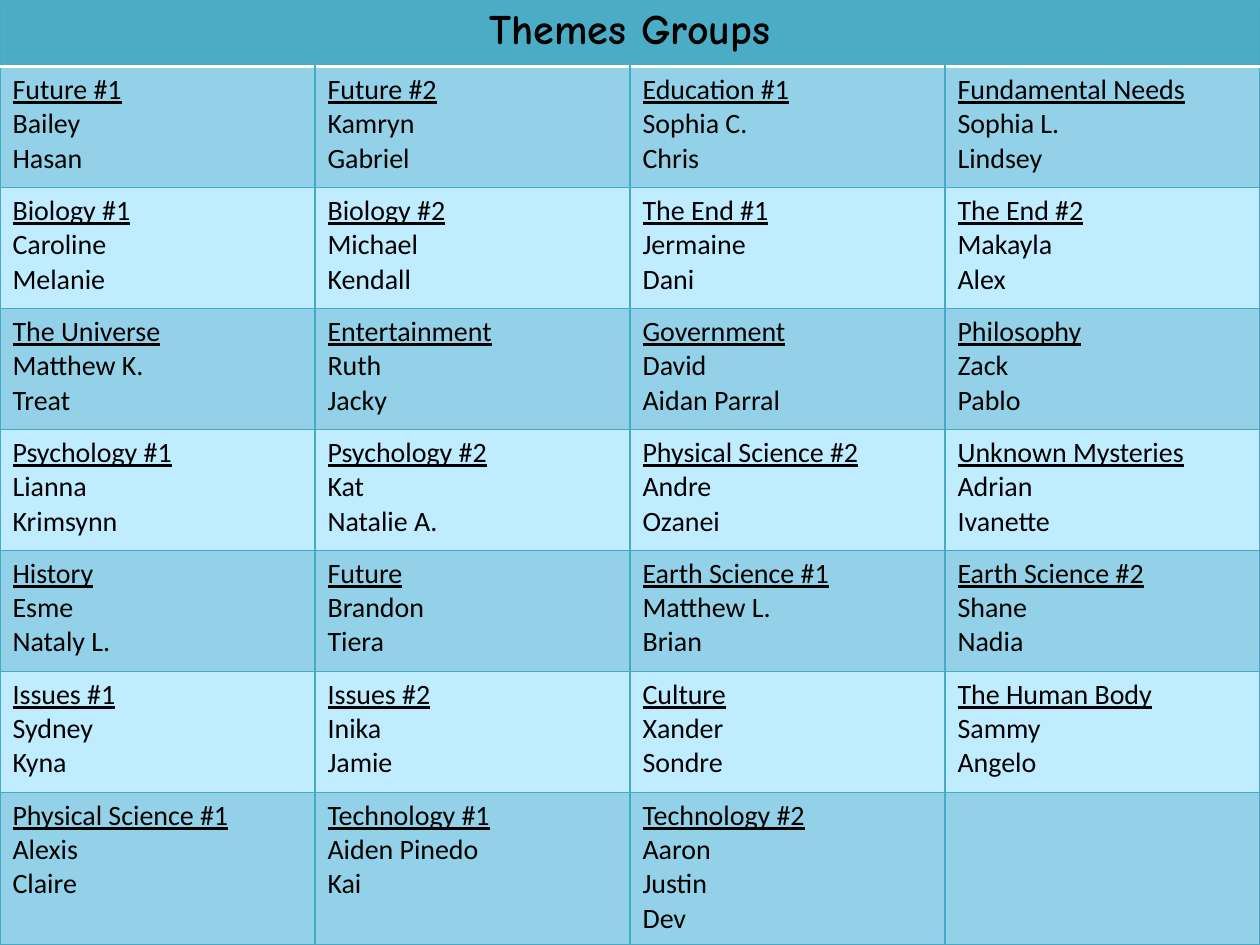
from dataclasses import dataclass

from lxml import etree
from pptx import Presentation
from pptx.dml.color import RGBColor
from pptx.enum.text import PP_ALIGN
from pptx.oxml.ns import qn
from pptx.table import _Cell
from pptx.util import Inches, Pt

CENTER, LEFT = PP_ALIGN.CENTER, PP_ALIGN.LEFT
BLANK_LAYOUT = 6
WIDTH, HEIGHT = 10, 7.5
COLUMNS = 4
HEADER_HEIGHT, ROW_HEIGHT = 0.53, 0.96
HEADER_FILL = "4BACC6"
BAND_FILLS = ("92D1E7", "C0ECFF")


@dataclass(frozen=True)
class Border:
    color: str
    points: float


@dataclass(frozen=True)
class Group:
    theme: str
    members: tuple[str, ...]


GRID = Border("46AAC5", 0.75)
HEADER_RULE = Border("FFFFFF", 2)

GROUPS = [
    Group("Future #1", ("Bailey", "Hasan")),
    Group("Future #2", ("Kamryn", "Gabriel")),
    Group("Education #1", ("Sophia C.", "Chris")),
    Group("Fundamental Needs", ("Sophia L.", "Lindsey")),
    Group("Biology #1", ("Caroline", "Melanie")),
    Group("Biology #2", ("Michael", "Kendall")),
    Group("The End #1", ("Jermaine", "Dani")),
    Group("The End #2", ("Makayla", "Alex")),
    Group("The Universe", ("Matthew K.", "Treat")),
    Group("Entertainment", ("Ruth", "Jacky")),
    Group("Government", ("David", "Aidan Parral")),
    Group("Philosophy", ("Zack", "Pablo")),
    Group("Psychology #1", ("Lianna", "Krimsynn")),
    Group("Psychology #2", ("Kat", "Natalie A.")),
    Group("Physical Science #2", ("Andre", "Ozanei")),
    Group("Unknown Mysteries", ("Adrian", "Ivanette")),
    Group("History", ("Esme", "Nataly L.")),
    Group("Future", ("Brandon", "Tiera")),
    Group("Earth Science #1", ("Matthew L.", "Brian")),
    Group("Earth Science #2", ("Shane", "Nadia")),
    Group("Issues #1", ("Sydney", "Kyna")),
    Group("Issues #2", ("Inika", "Jamie")),
    Group("Culture", ("Xander", "Sondre")),
    Group("The Human Body", ("Sammy", "Angelo")),
    Group("Physical Science #1", ("Alexis", "Claire")),
    Group("Technology #1", ("Aiden Pinedo", "Kai")),
    Group("Technology #2", ("Aaron", "Justin", "Dev")),
]


def rgb(color: str) -> RGBColor:
    return RGBColor.from_string(color)


def style_cell(cell: _Cell, fill: str, top: Border, bottom: Border) -> None:
    properties = cell._tc.get_or_add_tcPr()
    sides = {"a:lnL": GRID, "a:lnR": GRID, "a:lnT": top, "a:lnB": bottom}
    for tag, border in sides.items():
        line = etree.SubElement(properties, qn(tag), w=str(Pt(border.points)))
        paint = etree.SubElement(line, qn("a:solidFill"))
        etree.SubElement(paint, qn("a:srgbClr"), val=border.color)
    cell.fill.solid()
    cell.fill.fore_color.rgb = rgb(fill)


def write_lines(cell: _Cell, lines: tuple[str, ...], face: str, size: int,
                bold: bool = False, underline_first: bool = False,
                align: PP_ALIGN = LEFT) -> None:
    cell.text = "\n".join(lines)
    for index, para in enumerate(cell.text_frame.paragraphs):
        para.alignment = align
        font = para.font
        font.name, font.size, font.bold = face, Pt(size), bold
        font.underline = underline_first and index == 0
        font.color.rgb = rgb("000000")


def main() -> None:
    deck = Presentation()
    deck.slide_width, deck.slide_height = Inches(WIDTH), Inches(HEIGHT)
    page = deck.slides.add_slide(deck.slide_layouts[BLANK_LAYOUT])

    group_rows = -(-len(GROUPS) // COLUMNS)
    table = page.shapes.add_table(group_rows + 1, COLUMNS, 0, 0,
                                  deck.slide_width, deck.slide_height).table
    last_height = HEIGHT - HEADER_HEIGHT - ROW_HEIGHT * (group_rows - 1)
    heights = [HEADER_HEIGHT] + [ROW_HEIGHT] * (group_rows - 1) + [last_height]
    for row, height in zip(table.rows, heights):
        row.height = Inches(height)

    for column in range(COLUMNS):
        style_cell(table.cell(0, column), HEADER_FILL, GRID, HEADER_RULE)
        for row in range(1, group_rows + 1):
            top = HEADER_RULE if row == 1 else GRID
            style_cell(table.cell(row, column), BAND_FILLS[(row - 1) % 2], top, GRID)

    header = table.cell(0, 0)
    header.merge(table.cell(0, COLUMNS - 1))
    write_lines(header, ("Themes Groups",), "Comic Neue", 24, bold=True, align=CENTER)
    for index, group in enumerate(GROUPS):
        row, column = divmod(index, COLUMNS)
        write_lines(table.cell(row + 1, column), (group.theme, *group.members),
                    "Calibri", 16, underline_first=True)

    deck.save("out.pptx")


if __name__ == "__main__":
    main()
